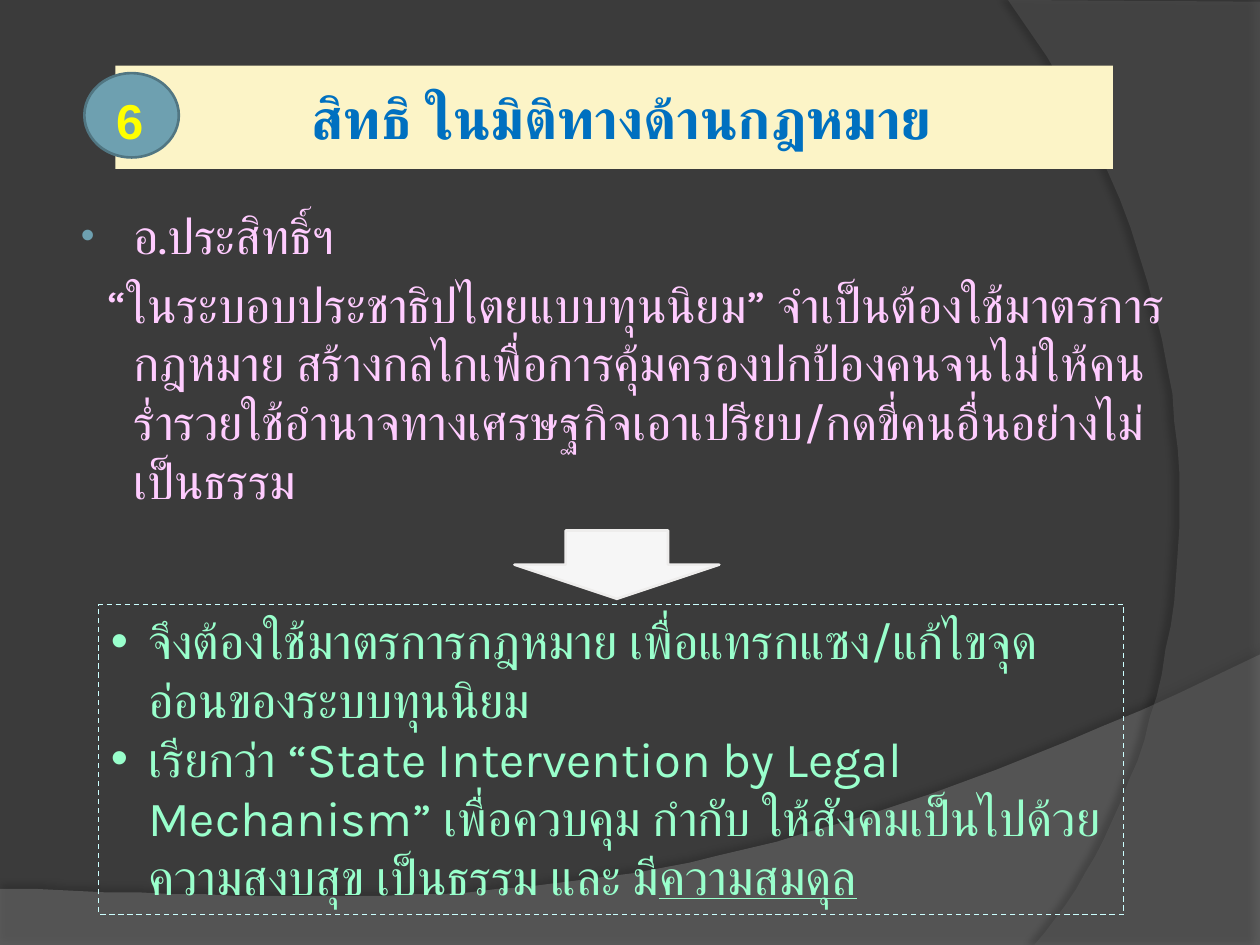
from lxml import etree
from pptx import Presentation
from pptx.dml.color import RGBColor
from pptx.enum.dml import MSO_LINE
from pptx.enum.shapes import MSO_SHAPE
from pptx.enum.text import MSO_ANCHOR, MSO_AUTO_SIZE, PP_ALIGN
from pptx.oxml.ns import qn
from pptx.util import Pt

RECT, OVAL, ARROW = MSO_SHAPE.RECTANGLE, MSO_SHAPE.OVAL, MSO_SHAPE.RIGHT_ARROW
DASH = MSO_LINE.DASH
MIDDLE, TOP = MSO_ANCHOR.MIDDLE, MSO_ANCHOR.TOP
CENTER, LEFT = PP_ALIGN.CENTER, PP_ALIGN.LEFT
FIXED = MSO_AUTO_SIZE.NONE


def rgb(code):
    return RGBColor.from_string(code)


def node(parent, tag, **attrs):
    return etree.SubElement(parent, qn(tag), {k: str(v) for k, v in attrs.items()})


def place(shape, box):
    shape.left, shape.top, shape.width, shape.height = map(Pt, box)


def paint(shape, fill=None, line=None, width=1.5):
    if fill:
        shape.fill.solid()
        shape.fill.fore_color.rgb = rgb(fill)
    else:
        shape.fill.background()
    if line:
        shape.line.color.rgb = rgb(line)
        shape.line.width = Pt(width)
    else:
        shape.line.fill.background()
    shape.shadow.inherit = False


def style(para, size, color, font="Karla", bold=False, align=LEFT):
    para.alignment = align
    for run in para.runs:
        run.font.size = Pt(size)
        run.font.bold = bold
        run.font.name = font
        run.font.color.rgb = rgb(color)
        node(run.font._element, "a:cs", typeface=font)


def indent(para, left, first, bullet=True, color=None, size=100):
    props = para._p.get_or_add_pPr()
    props.set("marL", str(Pt(left)))
    props.set("indent", str(Pt(first)))
    if not bullet:
        node(props, "a:buNone")
        return
    if color:
        node(node(props, "a:buClr"), "a:srgbClr", val=color)
    node(props, "a:buSzPct", val=size * 1000)
    node(props, "a:buFont", typeface="Arial")
    node(props, "a:buChar", char="•")


def frame(shape, anchor=TOP):
    text = shape.text_frame
    text.word_wrap = True
    text.auto_size = FIXED
    text.vertical_anchor = anchor
    return text


def curve(a, b, c, d, steps=40):
    for i in range(1, steps + 1):
        t = i / steps
        u = 1 - t
        yield tuple(u**3 * p + 3 * u * u * t * q + 3 * u * t * t * r + t**3 * s
                    for p, q, r, s in zip(a, b, c, d))


def sweep(slide, points, fill, alpha, dark, dist, angle):
    path = slide.shapes.build_freeform(*points[0], scale=Pt(1))
    path.add_line_segments(points[1:], close=True)
    shape = path.convert_to_shape()
    paint(shape, fill)
    props = shape._element.spPr
    tint = props.find(qn("a:solidFill")).find(qn("a:srgbClr"))
    node(tint, "a:alpha", val=alpha * 1000)
    glow = node(props.find(qn("a:effectLst")), "a:outerShdw", blurRad=Pt(4),
                dist=Pt(dist), dir=angle * 60000, algn="ctr", rotWithShape=0)
    node(node(glow, "a:srgbClr", val="000000"), "a:alpha", val=dark * 1000)


def backdrop(slide, box):
    x, y, w, h = box
    right, base = x + w, y + h
    wave = curve((right, y + 374.4), (x + 402.5, y + 524.9),
                 (x + 281.5, y + 517.7), (x, y + 507.6))
    sweep(slide, [(x, base), (right, base), (right, y + 374.4), *wave],
          "7F7F7F", 45, 35, 3.5, 270)
    arc = curve((x + 591, base), (x + 673.2, y + 445.7),
                (x + 733, y + 216), (x + 576, y))
    sweep(slide, [(right, y + 1.4), (right, base), (x + 591, base), *arc],
          "5E5E5E", 40, 45, 4, 180)


def heading(slide, box):
    title = slide.shapes.title
    slide.shapes.element.append(title.element)
    place(title, box)
    paint(title, "FCF4C7")
    text = frame(title, MIDDLE)
    text.margin_left = Pt(12)
    text.margin_right = text.margin_top = text.margin_bottom = Pt(3.6)
    text.text = "สิทธิ ในมิติทางด้านกฎหมาย"
    style(text.paragraphs[0], 32, "0070C0", bold=True, align=CENTER)


def quote(slide, box):
    body = slide.placeholders[1]
    slide.shapes.element.append(body.element)
    place(body, box)
    text = frame(body)
    text.text = (
        "อ.ประสิทธิ์ฯ\n"
        "“ในระบอบประชาธิปไตยแบบทุนนิยม” จำเป็นต้องใช้มาตรการกฎหมาย "
        "สร้างกลไกเพื่อการคุ้มครองปกป้องคนจนไม่ให้คนร่ำรวยใช้อำนาจทางเศรษฐกิจ"
        "เอาเปรียบ/กดขี่คนอื่นอย่างไม่เป็นธรรม")
    name, words = text.paragraphs
    for para in (name, words):
        para.space_before = Pt(5.6)
        style(para, 28, "FFCCFF")
    indent(name, 33, -30, color="6EA0B0", size=80)
    indent(words, 33, -15, bullet=False)


def arrow(slide, box):
    shape = slide.shapes.add_shape(ARROW, *map(Pt, box))
    shape.rotation = 90
    paint(shape, "F6F6F6", "EEEDEC")


def answer(slide, box):
    shape = slide.shapes.add_shape(RECT, *map(Pt, box))
    paint(shape, line="CCFFFF", width=0.75)
    shape.line.dash_style = DASH
    text = frame(shape)
    text.text = (
        "จึงต้องใช้มาตรการกฎหมาย เพื่อแทรกแซง/แก้ไขจุดอ่อนของระบบทุนนิยม\n"
        "เรียกว่า “State Intervention by Legal Mechanism” เพื่อควบคุม กำกับ "
        "ให้สังคมเป็นไปด้วยความสงบสุข เป็นธรรม และ มี")
    tail = text.paragraphs[1].add_run()
    tail.text = "ความสมดุล"
    tail.font.underline = True
    for para in text.paragraphs:
        style(para, 28, "99FFCC")
        indent(para, 21.6, -21.6)


def badge(slide, box):
    x, y, w, h = box
    oval = slide.shapes.add_shape(OVAL, *map(Pt, box))
    paint(oval, "6EA0B0", "517682")
    label = slide.shapes.add_textbox(Pt(x + 2), Pt(y + 6.5), Pt(w - 6), Pt(h - 13))
    text = frame(label)
    text.text = "6"
    style(text.paragraphs[0], 28, "FFFF00", "Arial", True, CENTER)


def main():
    deck = Presentation()
    deck.slide_width, deck.slide_height = Pt(720), Pt(540)
    slide = deck.slides.add_slide(deck.slide_layouts[1])
    slide.background.fill.solid()
    slide.background.fill.fore_color.rgb = rgb("3B3B3B")
    backdrop(slide, (0, 0, 720, 540))
    heading(slide, (66, 37.5, 570, 59))
    quote(slide, (36, 113.8, 648, 356.4))
    arrow(slide, (333, 264.2, 39, 117))
    answer(slide, (56.2, 345.5, 586, 177))
    badge(slide, (48.2, 41.8, 54, 48.2))
    deck.save("out.pptx")


if __name__ == "__main__":
    main()
